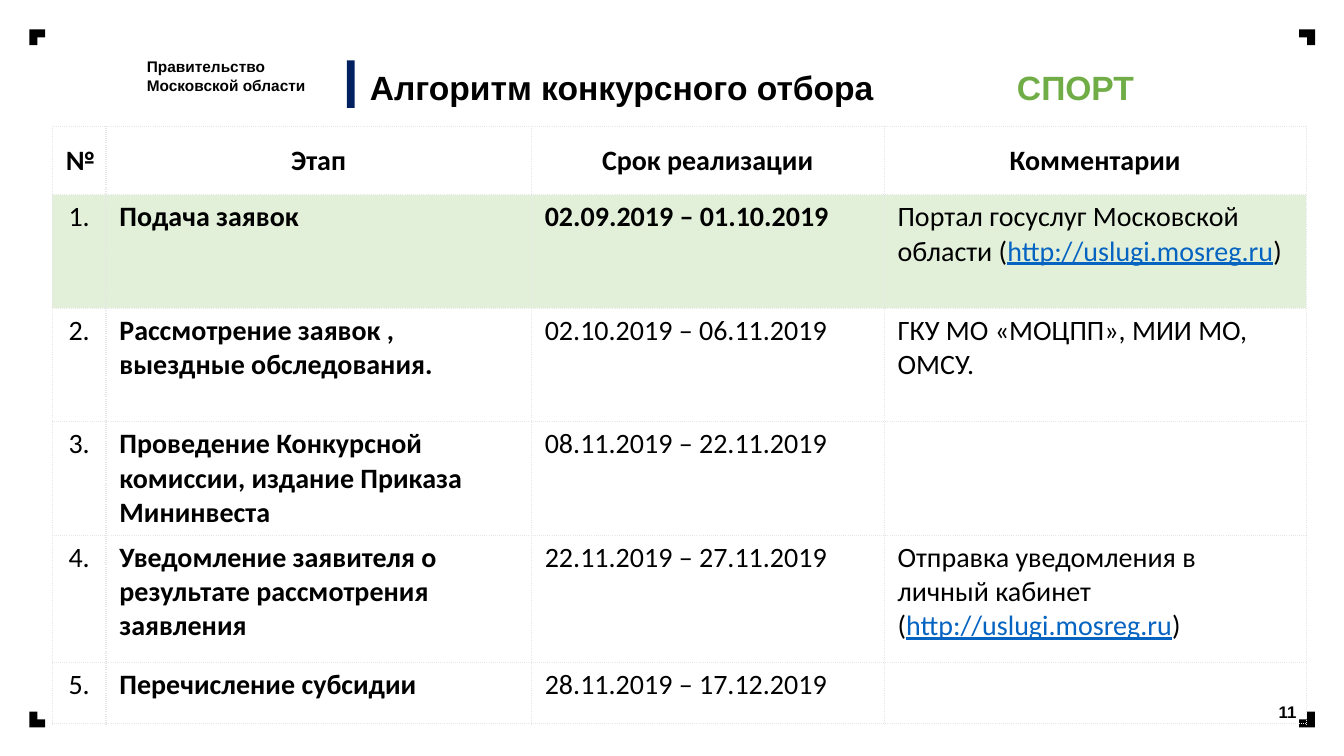
from lxml.etree import SubElement
from pptx import Presentation
from pptx.dml.color import RGBColor
from pptx.enum.shapes import MSO_SHAPE
from pptx.enum.text import MSO_ANCHOR, PP_ALIGN
from pptx.oxml import parse_xml
from pptx.oxml.ns import nsdecls, qn
from pptx.util import Cm, Pt

COLORS = {"black": "000000", "navy": "002060", "green": "70AD47",
          "pale": "E2F0D9", "link": "0563C1", "grid": "E7E6E6"}
LINK = "http://uslugi.mosreg.ru"
HEADER = ["№", "Этап", "Срок реализации", "Комментарии"]
STAGES = [
    ("Подача заявок", "02.09.2019 – 01.10.2019",
     f"Портал госуслуг Московской области ({LINK})"),
    ("Рассмотрение заявок , выездные обследования.", "02.10.2019 – 06.11.2019",
     "ГКУ МО «МОЦПП», МИИ МО, ОМСУ."),
    ("Проведение Конкурсной комиссии, издание Приказа Мининвеста",
     "08.11.2019 – 22.11.2019", ""),
    ("Уведомление заявителя о результате рассмотрения заявления",
     "22.11.2019 – 27.11.2019", f"Отправка уведомления в личный кабинет ({LINK})"),
    ("Перечисление субсидии", "28.11.2019 – 17.12.2019", ""),
]
CURRENT = 1
COLS = [1.35, 10.72, 8.89, 10.64]
ROWS = [1.73, 2.86, 2.86, 2.86, 3.2, 1.55]
CORNERS = [(0.74, 17.93, 0), (0.74, 0.74, 90), (32.74, 0.74, 180), (32.74, 17.93, 270)]
LEFT, CENTER = PP_ALIGN.LEFT, PP_ALIGN.CENTER
TOP, MIDDLE = MSO_ANCHOR.TOP, MSO_ANCHOR.MIDDLE
LABELS = [
    (["Правительство", "Московской области"], (3.45, 1.32, 4.6, 1.19), 11, "black",
     TOP, {"alignment": LEFT}, 0),
    (["Алгоритм конкурсного отбора"], (8.94, 1.68, 15.5, 1.04), 24, "black",
     TOP, {"alignment": LEFT, "line_spacing": 0.9}, 0.13),
    (["СПОРТ"], (25.25, 1.55, 5.46, 1.27), 24, "green", TOP, {"alignment": LEFT}, 0.13),
    (["11"], (31.75, 17.5, 1.4, 0.86), 12, "black", MIDDLE, {"alignment": CENTER}, 0),
]


def rgb(name):
    return RGBColor.from_string(COLORS[name])


def apply(obj, values):
    for key, value in values.items():
        setattr(obj, key, value)


def add_run(p, text, color="black", **font):
    r = p.add_run()
    r.text = text
    apply(r.font, font)
    r.font.color.rgb = rgb(color)


def add_block(s, kind, box, color, rotation=0):
    sp = s.shapes.add_shape(kind, *map(Cm, box))
    sp.shadow.inherit = False
    sp.fill.solid()
    sp.fill.fore_color.rgb = rgb(color)
    sp.line.fill.background()
    sp.rotation = rotation


def add_label(s, lines, box, size, color, anchor, layout, indent):
    tf = s.shapes.add_textbox(*map(Cm, box)).text_frame
    apply(tf, {"word_wrap": True, "vertical_anchor": anchor})
    for i, line in enumerate(lines):
        p = tf.add_paragraph() if i else tf.paragraphs[0]
        apply(p, layout)
        if indent:
            p._p.get_or_add_pPr().set("marL", str(Cm(indent)))
        add_run(p, line, color, size=Pt(size), name="Arial", bold=True)


def add_borders(cell):
    tcPr = cell._tc.get_or_add_tcPr()
    for i, side in enumerate("LRTB"):
        ln = parse_xml(f'<a:ln{side} {nsdecls("a")} w="{Pt(1)}"/>')
        fill = SubElement(ln, qn("a:solidFill"))
        SubElement(fill, qn("a:srgbClr"), val=COLORS["grid"])
        SubElement(ln, qn("a:prstDash"), val="sysDot")
        tcPr.insert(i, ln)


def fill_cell(cell, text, row, col):
    apply(cell, {"margin_left": Cm(0.34), "margin_right": Cm(0.34),
                 "margin_top": Cm(0.13), "margin_bottom": Cm(0.13),
                 "vertical_anchor": TOP if row else MIDDLE})
    if row == CURRENT:
        cell.fill.solid()
        cell.fill.fore_color.rgb = rgb("pale")
    else:
        cell.fill.background()
    add_borders(cell)
    p = cell.text_frame.paragraphs[0]
    p.alignment = LEFT if row and col else CENTER
    bold = row == 0 or col == 1 or (row == CURRENT and col == 2)
    for part in filter(None, text.partition(LINK)):
        linked = part == LINK
        add_run(p, part, "link" if linked else "black", size=Pt(20),
                name="Calibri", bold=bold, underline=linked)


def add_schedule(s):
    box = (1.32, 3.18, sum(COLS), sum(ROWS))
    table = s.shapes.add_table(len(ROWS), len(COLS), *map(Cm, box)).table
    apply(table, {"first_row": False, "horz_banding": False})
    for column, width in zip(table.columns, COLS):
        column.width = Cm(width)
    for row, height in zip(table.rows, ROWS):
        row.height = Cm(height)
    lines = [HEADER] + [(f"{n}.", *stage) for n, stage in enumerate(STAGES, 1)]
    for row, line in enumerate(lines):
        for col, text in enumerate(line):
            fill_cell(table.cell(row, col), text, row, col)


def main():
    prs = Presentation()
    apply(prs, {"slide_width": Cm(33.87), "slide_height": Cm(19.05)})
    s = prs.slides.add_slide(prs.slide_layouts[6])
    for left, top, rotation in CORNERS:
        add_block(s, MSO_SHAPE.CORNER, (left, top, 0.4, 0.4), "black", rotation)
    add_block(s, MSO_SHAPE.RECTANGLE, (8.74, 1.52, 0.2, 1.2), "navy")
    add_schedule(s)
    for label in LABELS:
        add_label(s, *label)
    prs.save("out.pptx")


if __name__ == "__main__":
    main()
